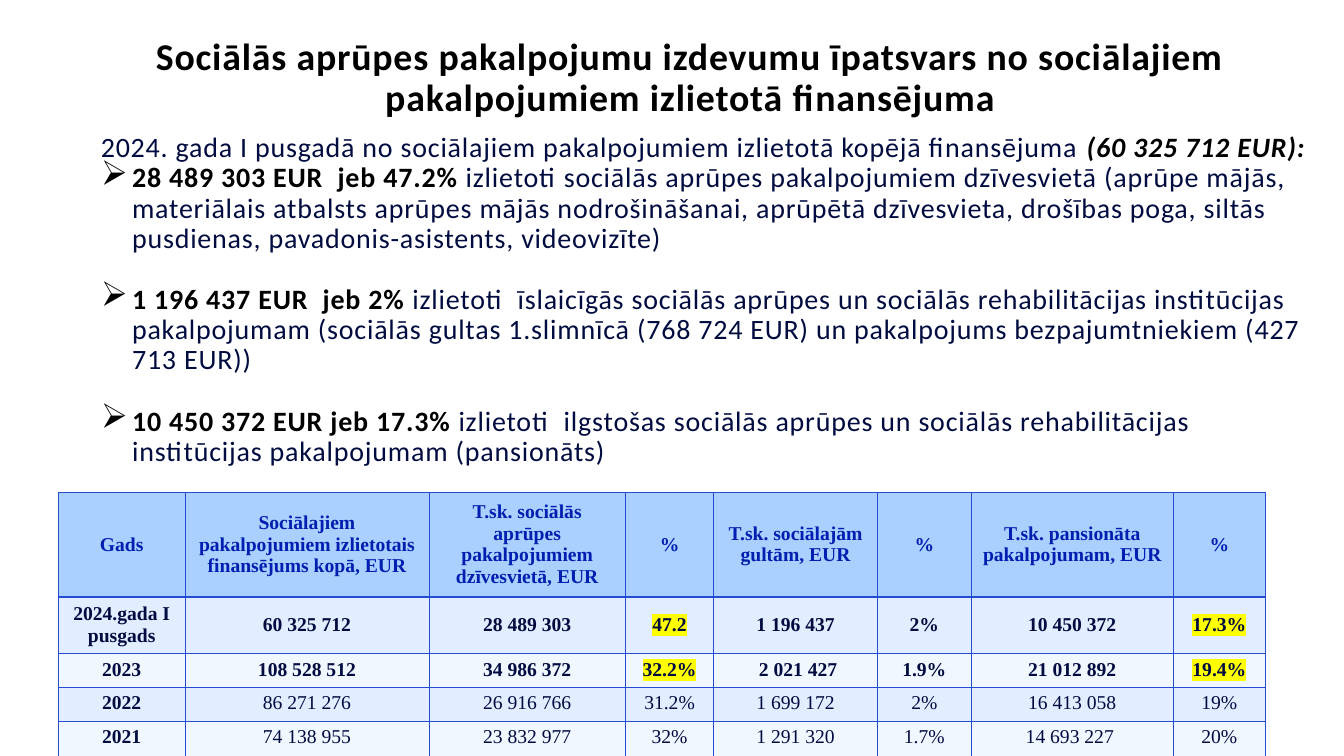
from lxml.etree import SubElement
from pptx import Presentation
from pptx.dml.color import RGBColor
from pptx.enum.text import MSO_ANCHOR, PP_ALIGN
from pptx.oxml import parse_xml
from pptx.oxml.ns import nsdecls, qn
from pptx.util import Pt

TITLE = "Sociālās aprūpes pakalpojumu izdevumu īpatsvars no sociālajiem pakalpojumiem izlietotā finansējuma"
INTRO = ("2024. gada I pusgadā no sociālajiem pakalpojumiem izlietotā kopējā finansējuma ",
         "(60 325 712 EUR):")
BULLETS = [
    ("28 489 303 EUR  jeb 47.2% ",
     "izlietoti sociālās aprūpes pakalpojumiem dzīvesvietā (aprūpe mājās, materiālais atbalsts "
     "aprūpes mājās nodrošināšanai, aprūpētā dzīvesvieta, drošības poga, siltās pusdienas, "
     "pavadonis-asistents, videovizīte)"),
    ("1 196 437 EUR  jeb 2% ",
     "izlietoti  īslaicīgās sociālās aprūpes un sociālās rehabilitācijas institūcijas pakalpojumam "
     "(sociālās gultas 1.slimnīcā (768 724 EUR) un pakalpojums bezpajumtniekiem (427 713 EUR))"),
    ("10 450 372 EUR jeb 17.3% ",
     "izlietoti  ilgstošas sociālās aprūpes un sociālās rehabilitācijas institūcijas pakalpojumam "
     "(pansionāts)"),
]
ROWS = [
    ("Gads", "Sociālajiem pakalpojumiem izlietotais finansējums kopā, EUR",
     "T.sk. sociālās aprūpes pakalpojumiem dzīvesvietā, EUR", "%",
     "T.sk. sociālajām gultām, EUR", "%", "T.sk. pansionāta pakalpojumam, EUR", "%"),
    ("2024.gada I pusgads", "60 325 712", "28 489 303", "47.2", "1 196 437", "2%", "10 450 372", "17.3%"),
    ("2023", "108 528 512", "34 986 372", "32.2%", " 2 021 427", "1.9%", "21 012 892", "19.4%"),
    ("2022", "86 271 276", "26 916 766", "31.2%", "1 699 172", "2%", "16 413 058", "19%"),
    ("2021", "74 138 955", "23 832 977", "32%", "1 291 320", "1.7%", "14 693 227 ", "20%"),
]
COL_WIDTHS = [180.7, 348.5, 280.8, 126, 234, 133.9, 288.7, 131.8]
ROW_HEIGHTS = [136.8, 74.9, 43.9, 43.9, 51.8]
HIGHLIGHTED = {(1, 3), (1, 7), (2, 3), (2, 7)}
THEME = {
    "black": "000000", "navy": "000B40", "header_text": "001EB0", "header_fill": "AAD0FF",
    "bands": ("F1F7FF", "E2EEFF"), "border": "244CD3", "highlight": "FFFF00",
    "sans": "Calibri", "serif": "Times New Roman", "title": 54, "body": 40, "table": 28,
}


def set_attrs(obj, values):
    for name, value in values.items():
        setattr(obj, name, value)


def add_run(p, text, color, size, face="sans", spacing=None, **fmt):
    r = p.add_run()
    r.text = text
    set_attrs(r.font, {"name": THEME[face], "size": Pt(THEME[size]), **fmt})
    r.font.color.rgb = RGBColor.from_string(THEME[color])
    if spacing:
        r.font._element.set("spc", str(spacing))
    return r


def add_text_box(s, left, top, width, height, inset_x, inset_y):
    tf = s.shapes.add_textbox(Pt(left), Pt(top), Pt(width), Pt(height)).text_frame
    set_attrs(tf, {"word_wrap": True, "margin_left": Pt(inset_x), "margin_right": Pt(inset_x),
                   "margin_top": Pt(inset_y), "margin_bottom": Pt(inset_y)})
    tf.paragraphs[0].line_spacing = 0.9
    return tf


def add_body(s):
    tf = add_text_box(s, 144, 190.8, 1725.1, 769.7, 0, 0)
    p = tf.paragraphs[0]
    add_run(p, INTRO[0], "navy", "body", spacing=120)
    add_run(p, INTRO[1], "black", "body", spacing=120, bold=True, italic=True)
    for i, (amount, purpose) in enumerate(BULLETS):
        p = tf.add_paragraph()
        set_attrs(p, {"line_spacing": 0.9, "space_before": Pt(44 if i else 0)})
        pPr = p._p.get_or_add_pPr()
        pPr.set("marL", str(Pt(44.64)))
        pPr.set("indent", str(-Pt(44.64)))
        SubElement(pPr, qn("a:buSzPct")).set("val", "123000")
        SubElement(pPr, qn("a:buChar")).set("char", "➢")
        add_run(p, amount, "black", "body", spacing=120, bold=True)
        add_run(p, purpose, "navy", "body", spacing=120)


def add_borders(cell, widths):
    for i, (side, width) in enumerate(widths.items()):
        cell._tc.get_or_add_tcPr().insert(i, parse_xml(
            f'<a:ln{side} {nsdecls("a")} w="{Pt(width)}"><a:solidFill>'
            f'<a:srgbClr val="{THEME["border"]}"/></a:solidFill></a:ln{side}>'))


def fill_cell(cell, row, col, text):
    header = row == 0
    set_attrs(cell, {"margin_left": Pt(14.4), "margin_right": Pt(14.4),
                     "margin_top": Pt(7.2), "margin_bottom": Pt(7.2),
                     "vertical_anchor": MSO_ANCHOR.MIDDLE if row < 2 else MSO_ANCHOR.TOP})
    cell.fill.solid()
    cell.fill.fore_color.rgb = RGBColor.from_string(
        THEME["header_fill"] if header else THEME["bands"][row % 2])
    add_borders(cell, {"L": 1, "R": 1, "T": 3 if row == 1 else 1, "B": 3 if header else 1})
    p = cell.text_frame.paragraphs[0]
    p.alignment = PP_ALIGN.CENTER
    r = add_run(p, text, "header_text" if header else "navy", "table", "serif",
                bold=row < 3 or col == 0)
    if (row, col) in HIGHLIGHTED:
        r.font._element.find(qn("a:solidFill")).addnext(parse_xml(
            f'<a:highlight {nsdecls("a")}><a:srgbClr val="{THEME["highlight"]}"/></a:highlight>'))


def add_spending_table(s):
    table = s.shapes.add_table(len(ROWS), len(COL_WIDTHS), Pt(83.5), Pt(703.4),
                               Pt(sum(COL_WIDTHS)), Pt(sum(ROW_HEIGHTS))).table
    for column, width in zip(table.columns, COL_WIDTHS):
        column.width = Pt(width)
    for i, (height, values) in enumerate(zip(ROW_HEIGHTS, ROWS)):
        table.rows[i].height = Pt(height)
        for j, text in enumerate(values):
            fill_cell(table.cell(i, j), i, j, text)


def main():
    """Build the slide on the share of social care spending."""
    prs = Presentation()
    set_attrs(prs, {"slide_width": Pt(1920), "slide_height": Pt(1080)})
    s = prs.slides.add_slide(prs.slide_layouts[6])
    add_body(s)
    add_spending_table(s)
    p = add_text_box(s, 123.8, 51.1, 1725.1, 50.4, 7.2, 3.6).paragraphs[0]
    p.alignment = PP_ALIGN.CENTER
    add_run(p, TITLE, "black", "title", spacing=120, bold=True)
    prs.save("out.pptx")


if __name__ == "__main__":
    main()
